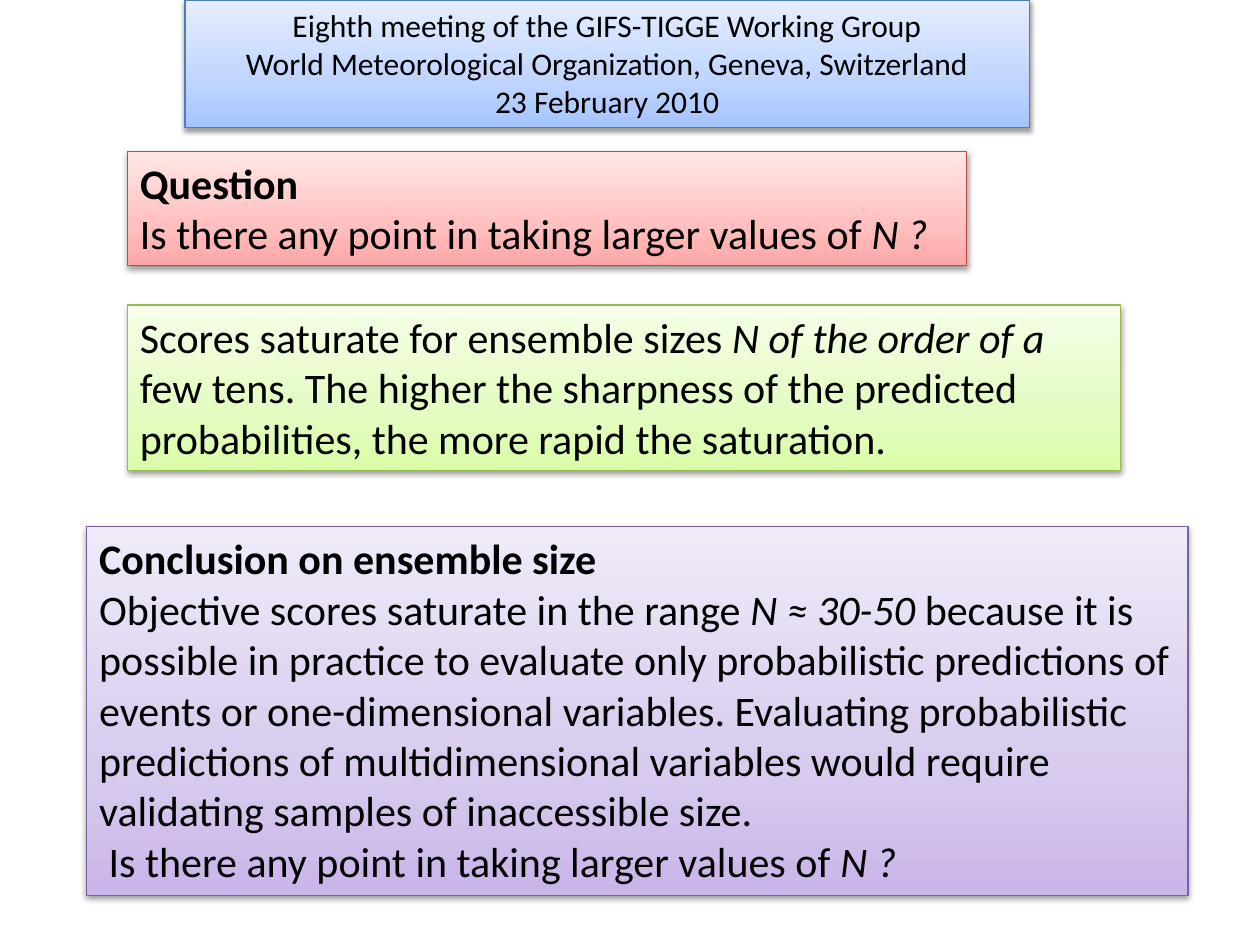
from copy import deepcopy

from lxml import etree
from pptx import Presentation
from pptx import util as u
from pptx.dml.color import RGBColor
from pptx.enum import shapes, text
from pptx.oxml import ns

BLACK = RGBColor(0x00, 0x00, 0x00)
# Each palette: outline, then gradient from bottom to top
GREEN = [RGBColor.from_string(c) for c in ("98B955", "DAFDA7", "E4FCC2", "F5FFE7")]
RED = [RGBColor.from_string(c) for c in ("BF4C48", "FFA6A5", "FFC0BF", "FFE7E7")]
PURPLE = [RGBColor.from_string(c) for c in ("7D60A0", "C9B5E8", "D8CBEE", "F0EAF9")]
BLUE = [RGBColor.from_string(c) for c in ("4B7EBC", "A4C4FF", "BFD4FF", "E6EEFF")]


class SlideBuilder:
    font_name = "Calibri"
    stop_positions = (0, 0.35, 1)

    def __init__(self, slide):
        self.slide = slide

    def panel(self, left, top, width, height, palette, paragraphs,
              size=24, heading=False, align=text.PP_ALIGN.LEFT):
        """Add a shaded box; with heading, its first paragraph is bold."""
        shape = self.slide.shapes.add_shape(
            shapes.MSO_SHAPE.RECTANGLE,
            u.Cm(left), u.Cm(top), u.Cm(width), u.Cm(height))
        outline, *gradient = palette
        self.gradient(shape, gradient)
        shape.line.color.rgb = outline
        shape.line.width = u.Pt(0.75)
        self.shadow(shape)

        frame = shape.text_frame
        frame.word_wrap = True
        frame.auto_size = text.MSO_AUTO_SIZE.SHAPE_TO_FIT_TEXT
        frame.vertical_anchor = text.MSO_ANCHOR.TOP
        for index, pieces in enumerate(paragraphs):
            paragraph = frame.add_paragraph() if index else frame.paragraphs[0]
            paragraph.alignment = align
            self.fill_paragraph(paragraph, pieces, size,
                                bold=heading and index == 0)

    def fill_paragraph(self, paragraph, pieces, size, bold):
        """Add the pieces as runs; every second one is italic."""
        font = paragraph.font
        font.name, font.size, font.bold = self.font_name, u.Pt(size), bold
        font.color.rgb = BLACK
        for index, piece in enumerate(pieces):
            run = paragraph.add_run()
            run.text = piece
            if index % 2:
                run.font.italic = True

    def gradient(self, shape, colors):
        shape.fill.gradient()
        shape.fill.gradient_angle = 90
        stop_list = shape.element.spPr.find(".//" + ns.qn("a:gsLst"))
        stop_list.append(deepcopy(stop_list[-1]))
        for stop, position, color in zip(
                shape.fill.gradient_stops, self.stop_positions, colors):
            stop.position = position
            stop.color.rgb = color

    def shadow(self, shape):
        shape.shadow.inherit = False
        effects = shape.element.spPr.find(ns.qn("a:effectLst"))
        shadow = etree.SubElement(
            effects, ns.qn("a:outerShdw"), blurRad=str(u.Pt(3.1)),
            dist=str(u.Pt(1.6)), dir="5400000", rotWithShape="0")
        color = etree.SubElement(shadow, ns.qn("a:srgbClr"), val=str(BLACK))
        etree.SubElement(color, ns.qn("a:alpha"), val="38000")


def main():
    presentation = Presentation()
    presentation.slide_width, presentation.slide_height = u.Cm(25.4), u.Cm(19.05)
    builder = SlideBuilder(
        presentation.slides.add_slide(presentation.slide_layouts[6]))
    question = ("Is there any point in taking larger values of ", "N ?")

    builder.panel(2.57, 6.15, 20.02, 3.33, GREEN, [
        ("Scores saturate for ensemble sizes ", "N of the order of a"),
        ("few tens. The higher the sharpness of the predicted",),
        ("probabilities, the more rapid the saturation.",),
    ])
    builder.panel(2.57, 3.05, 16.92, 2.31, RED,
                  [("Question",), question], heading=True)
    builder.panel(1.75, 10.62, 22.2, 7.44, PURPLE, [
        ("Conclusion on ensemble size",),
        ("Objective scores saturate in the range ", "N ≈ 30-50 ",
         "because it is possible in practice to evaluate only probabilistic "
         "predictions of events or one-dimensional variables. Evaluating "
         "probabilistic predictions of multidimensional variables would "
         "require validating samples of inaccessible size."),
        (" " + question[0], question[1]),
    ], heading=True)
    builder.panel(3.73, 0, 17.02, 2.57, BLUE, [
        ("Eighth meeting of the GIFS-TIGGE Working Group",),
        ("World Meteorological Organization, Geneva, Switzerland",),
        ("23 February 2010",),
    ], size=18, align=text.PP_ALIGN.CENTER)

    presentation.save("out.pptx")


if __name__ == "__main__":
    main()
